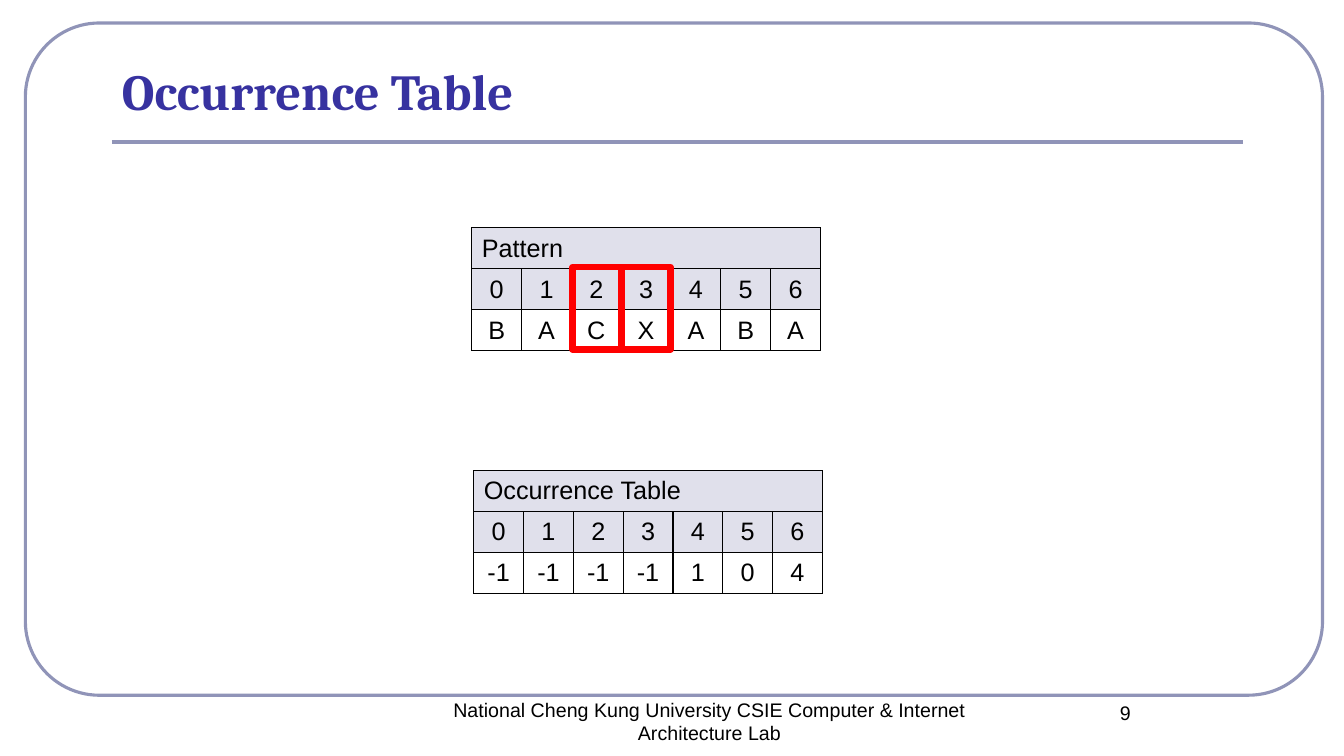
"""Build the Occurrence Table slide."""
from pptx import Presentation
from pptx.dml.color import RGBColor
from pptx.enum.shapes import MSO_CONNECTOR, MSO_SHAPE
from pptx.enum.text import MSO_ANCHOR as ANCHOR, MSO_AUTO_SIZE, PP_ALIGN as ALIGN
from pptx.oxml import parse_xml
from pptx.oxml.ns import nsdecls
from pptx.oxml.xmlchemy import OxmlElement
from pptx.util import Cm, Pt

COLORS = {"title": "3732A0", "frame": "9094B8", "header": "E0E0EB",
          "text": "000000", "mark": "FF0000"}
RGB = {name: RGBColor.from_string(value) for name, value in COLORS.items()}


def write(tf, text, align, size=18, font="Arial", color="text", bold=False):
    p = tf.paragraphs[0]
    p.alignment = align
    r = p.add_run()
    r.text = text
    for name, value in {"size": Pt(size), "name": font, "bold": bold}.items():
        setattr(r.font, name, value)
    r.font.color.rgb = RGB[color]


def outline(kind, left, top, width, height, color, weight):
    sp = s.shapes.add_shape(kind, Cm(left), Cm(top), Cm(width), Cm(height))
    sp.shadow.inherit = False
    sp.fill.background()
    sp.line.color.rgb = RGB[color]
    sp.line.width = Pt(weight)
    return sp


prs = Presentation()
prs.slide_width, prs.slide_height = Cm(33.87), Cm(19.05)
s = prs.slides.add_slide(prs.slide_layouts[5])

frame = outline(MSO_SHAPE.ROUNDED_RECTANGLE, 0.64, 0.58, 32.69, 16.94, "frame", 2.25)
frame.adjustments[0] = 0.11
rule = s.shapes.add_connector(MSO_CONNECTOR.STRAIGHT, Cm(2.82), Cm(3.58), Cm(31.32), Cm(3.58))
rule.line.color.rgb = RGB["frame"]
rule.line.width = Pt(3)
rule._element.spPr.append(OxmlElement("a:effectLst"))

title = s.shapes.title
for name, value in {"left": 2.82, "top": 1.52, "width": 28.5, "height": 1.65}.items():
    setattr(title, name, Cm(value))
tf = title.text_frame
for name, value in {"auto_size": MSO_AUTO_SIZE.NONE, "word_wrap": True,
                    "vertical_anchor": ANCHOR.BOTTOM}.items():
    setattr(tf, name, value)
write(tf, "Occurrence Table", ALIGN.LEFT, 36, "Cambria", "title", True)

footers = [
    ("National Cheng Kung University CSIE Computer & Internet Architecture Lab", 10.54, 17.45, 14.68),
    ("9", 25.4, 17.53, 5.92),
]
for text, left, top, width in footers:
    tf = s.shapes.add_textbox(Cm(left), Cm(top), Cm(width), Cm(1.27)).text_frame
    tf.word_wrap = True
    write(tf, text, ALIGN.CENTER, 14)

tables = [
    ("Pattern", ["B", "A", "C", "X", "A", "B", "A"], 11.89, 5.74),
    ("Occurrence Table", ["-1", "-1", "-1", "-1", "1", "0", "4"], 11.94, 11.86),
]
for heading, values, left, top in tables:
    n = len(values)
    table = s.shapes.add_table(3, n, Cm(left), Cm(top), Cm(8.79), Cm(3.1)).table
    table.cell(0, 0).merge(table.cell(0, n - 1))
    rows = [[heading] + [""] * (n - 1), [str(i) for i in range(n)], values]
    for i, row in enumerate(rows):
        for j, text in enumerate(row):
            cell = table.cell(i, j)
            cell.vertical_anchor = ANCHOR.MIDDLE
            if text:
                write(cell.text_frame, text, ALIGN.CENTER if i else ALIGN.LEFT)
            for side in "LRTB":
                cell._tc.get_or_add_tcPr().append(parse_xml(
                    f'<a:ln{side} {nsdecls("a")} w="{Pt(1)}"><a:solidFill>'
                    f'<a:srgbClr val="{COLORS["text"]}"/></a:solidFill></a:ln{side}>'))
            if i < 2:
                cell.fill.solid()
                cell.fill.fore_color.rgb = RGB["header"]
            else:
                cell.fill.background()

for i in range(2):
    outline(MSO_SHAPE.RECTANGLE, 14.43 + 1.23 * i, 6.73, 1.24, 2.08, "mark", 4.5)

prs.save("out.pptx")
